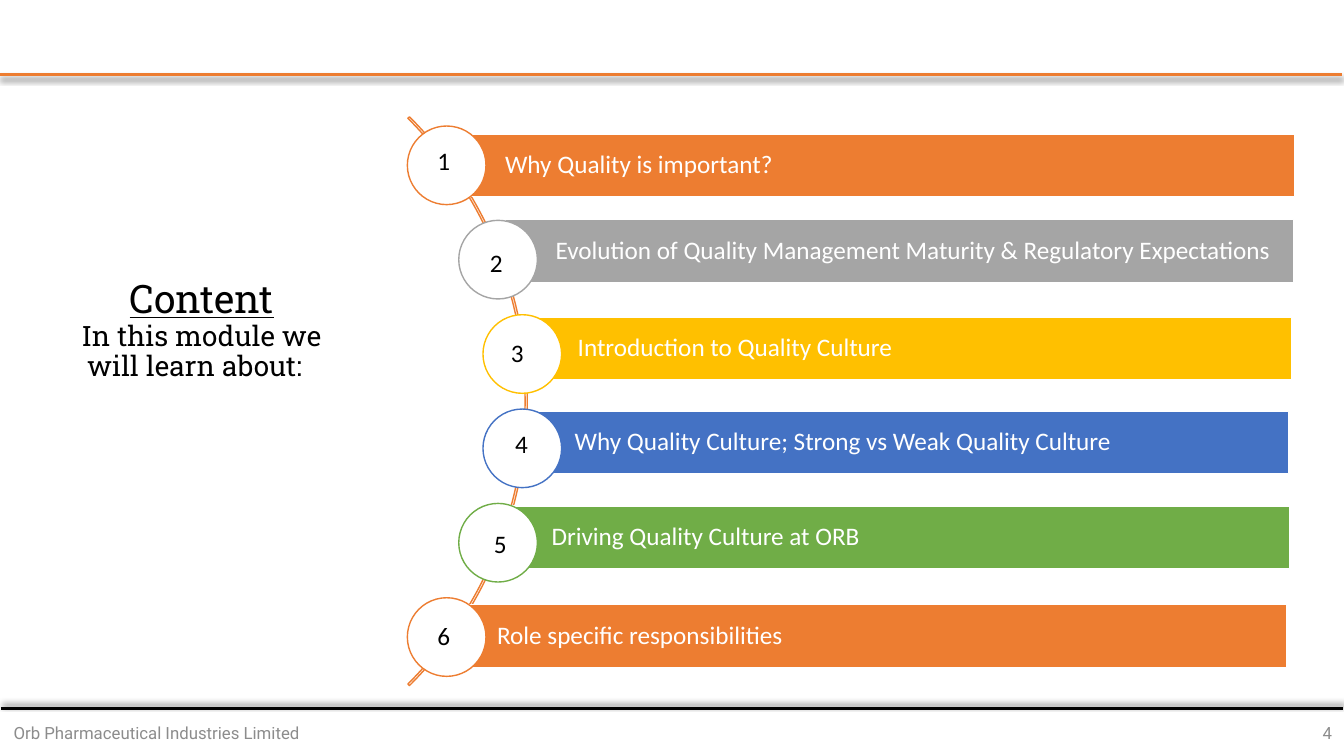
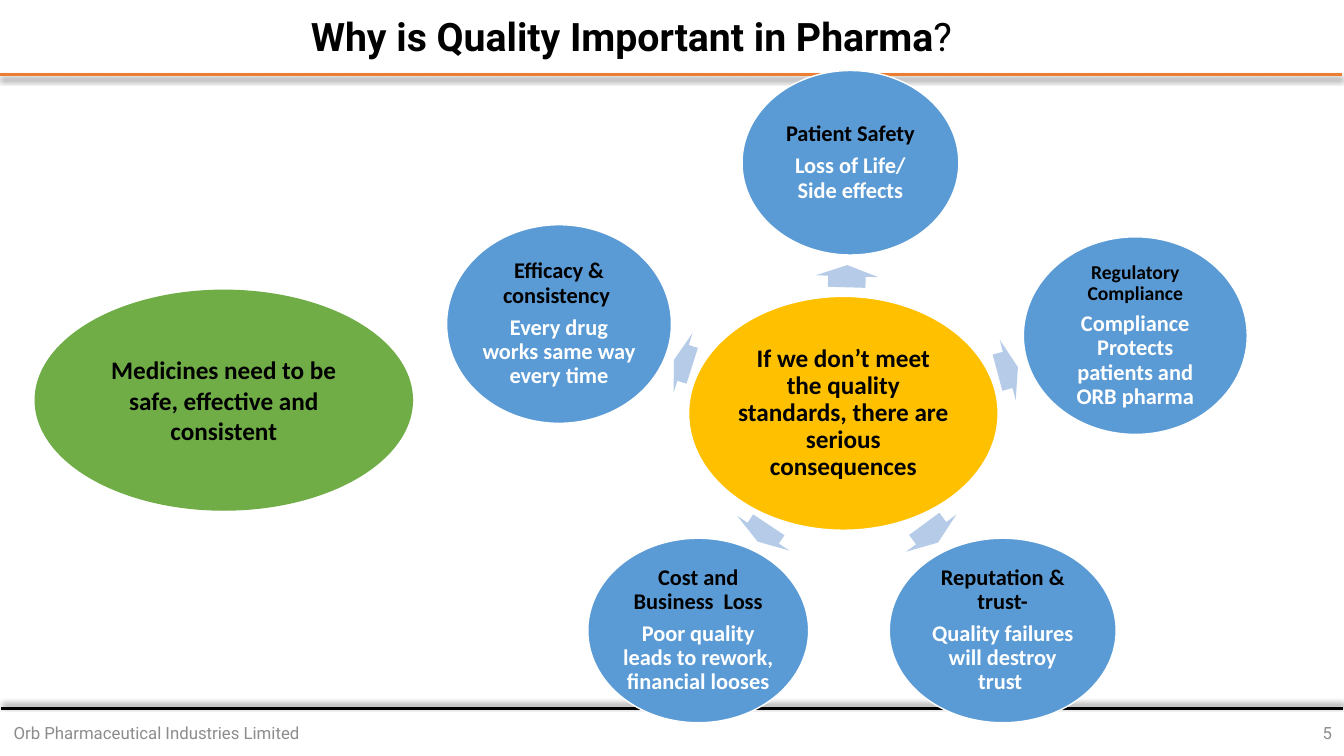
from dataclasses import dataclass

from lxml import etree
from pptx import Presentation
from pptx import util as u
from pptx.dml.color import RGBColor
from pptx.enum import shapes, text
from pptx.oxml import ns

MIDDLE = text.MSO_ANCHOR.MIDDLE
LEFT, CENTER, RIGHT = text.PP_ALIGN.LEFT, text.PP_ALIGN.CENTER, text.PP_ALIGN.RIGHT
SHAPE = shapes.MSO_SHAPE


@dataclass(frozen=True)
class Theme:
    white: str = "FFFFFF"
    black: str = "000000"
    muted: str = "8C8C8C"
    orange: str = "ED7D31"
    gray: str = "A5A5A5"
    gold: str = "FFC000"
    blue: str = "4472C4"
    green: str = "70AD47"
    sky: str = "5B9BD5"
    pale: str = "B5CBE7"
    body_font: str = "Calibri"
    head_font: str = "Roboto"
    slab_font: str = "Roboto Slab"
    title: int = 28
    lead: int = 20
    body: int = 18
    detail: int = 16
    compact: int = 14
    footer: int = 12


T = Theme()


def inches(*lengths):
    return [u.Inches(length) for length in lengths]


def font(size, color, name=T.body_font, **extra):
    return dict(size=u.Pt(size), color=color, name=name, **extra)


class Deck:
    """Holds the style and the slide being built."""

    def __init__(self, first_number):
        self.prs = Presentation()
        self.prs.slide_width, self.prs.slide_height = inches(13.33, 7.5)
        self.layout = self.prs.slide_layouts[5]
        self.number = first_number
        self.slide = None

    def new_slide(self, title_at, title_runs):
        self.slide = self.prs.slides.add_slide(self.layout)
        if len(self.prs.slides) == 1:
            self.shared_rule(0, 0.74, T.orange, 90)
            self.shared_rule(0.01, 7.03, T.black, 270)
        title = self.slide.shapes.title
        title.left, title.top, title.width, title.height = inches(*title_at)
        self.set_text(title.text_frame, [title_runs], CENTER, spacing=0.9)
        small = font(T.footer, T.muted, T.head_font)
        self.label((0.01, 7.07, 3.09, 0.4), "Orb Pharmaceutical Industries Limited", small, CENTER)
        self.label((10.31, 7.07, 3, 0.4), str(self.number), small, RIGHT)
        self.number += 1

    def shared_rule(self, left, top, color, direction):
        """Draws a shadowed rule and moves it to the layout."""
        rule = self.slide.shapes.add_connector(
            shapes.MSO_CONNECTOR.STRAIGHT, *inches(left, top, left + 13.31, top))
        rule.line.color.rgb = RGBColor.from_string(color)
        rule.line.width = u.Pt(2.25)
        effects = etree.SubElement(rule.element.spPr, ns.qn("a:effectLst"))
        shadow = etree.SubElement(
            effects, ns.qn("a:outerShdw"), blurRad=str(u.Pt(4)), dist=str(u.Pt(3)),
            dir=str(direction * 60000), algn="t", rotWithShape="0")
        tint = etree.SubElement(shadow, ns.qn("a:srgbClr"), val=T.black)
        etree.SubElement(tint, ns.qn("a:alpha"), val="40000")
        self.layout.shapes.element.append(rule.element)

    def set_text(self, frame, paragraphs, align, spacing=None, gap=0, **frame_format):
        """Each paragraph is a list of (text, font format); "\\n" breaks a line."""
        defaults = dict(word_wrap=True, auto_size=text.MSO_AUTO_SIZE.NONE,
                        vertical_anchor=MIDDLE)
        for key, value in {**defaults, **frame_format}.items():
            setattr(frame, key, value)
        for index, runs in enumerate(paragraphs):
            paragraph = frame.add_paragraph() if index else frame.paragraphs[0]
            paragraph.alignment = align
            paragraph.line_spacing = spacing
            if index:
                paragraph.space_before = u.Pt(gap)
            for words, style in runs:
                if words == "\n":
                    paragraph.add_line_break()
                    continue
                run = paragraph.add_run()
                run.text = words
                for key, value in style.items():
                    if key == "color":
                        run.font.color.rgb = RGBColor.from_string(value)
                    else:
                        setattr(run.font, key, value)

    def label(self, at, words, style, align, **frame_format):
        box = self.slide.shapes.add_textbox(*inches(*at))
        self.set_text(box.text_frame, [[(words, style)]], align, **frame_format)

    def shape(self, kind, at, fill=None, line=None, adjust=(), rotation=0):
        item = self.slide.shapes.add_shape(kind, *inches(*at))
        item.shadow.inherit = False
        item.rotation = rotation
        for index, value in enumerate(adjust):
            item.adjustments[index] = value
        if fill:
            item.fill.solid()
            item.fill.fore_color.rgb = RGBColor.from_string(fill)
        else:
            item.fill.background()
        if line:
            item.line.color.rgb = RGBColor.from_string(line)
            item.line.width = u.Pt(1)
        else:
            item.line.fill.background()
        return item

    def bar(self, at, fill, words):
        bar = self.shape(SHAPE.RECTANGLE, at, fill, T.white)
        self.set_text(bar.text_frame, [[(words, font(T.body, T.white))]], LEFT,
                      spacing=0.9, margin_left=u.Inches(0.5), margin_right=u.Inches(0.05))

    def bubble(self, at, fill, paragraphs, line=T.white, spacing=0.9, margin=0.02):
        bubble = self.shape(SHAPE.OVAL, at, fill, line)
        sides = ("left", "top", "right", "bottom")
        margins = {f"margin_{side}": u.Inches(margin) for side in sides}
        self.set_text(bubble.text_frame, [[run] for run in paragraphs], CENTER,
                      spacing=spacing, gap=5.6, **margins)


def build_contents(deck):
    heading = font(T.title, T.black, T.slab_font, underline=True)
    lead = font(T.lead, T.black, T.slab_font, underline=False)
    deck.new_slide((0.62, 2.6, 2.76, 1.37), [
        ("Content", heading), ("\n", {}), ("In this module we will learn about:  ", lead)])

    # Arc behind the topics
    deck.shape(SHAPE.BLOCK_ARC, (-2.75, -0.01, 7.98, 7.98), line=T.orange,
               adjust=(189, 27, 0.0027))

    # Topics: words, colour, bar left and top, circle left, digit left and top
    topics = [
        ("Why Quality is important?", T.orange, 4.51, 1.33, 4.04, 4.24, 1.39),
        ("Evolution of Quality Management Maturity & Regulatory Expectations",
         T.gray, 5.01, 2.18, 4.55, 4.76, 2.4),
        ("Introduction to Quality Culture", T.gold, 5.23, 3.15, 4.79, 4.97, 3.3),
        ("Why Quality Culture; Strong vs Weak Quality Culture",
         T.blue, 5.2, 4.08, 4.79, 5.01, 4.2),
        ("Driving Quality Culture at ORB", T.green, 4.97, 5.02, 4.55, 4.8, 5.19),
        ("Role specific responsibilities", T.orange, 4.43, 6, 4.04, 4.24, 6.11),
    ]
    circle, total = 0.78, 12.37
    first, last = 1.25, 5.93
    step = (last - first) / (len(topics) - 1)
    for index, topic in enumerate(topics):
        words, color, bar_left, bar_top, circle_left, digit_left, digit_top = topic
        deck.bar((bar_left, bar_top, total - circle_left, 0.62), color, words)
        deck.shape(SHAPE.OVAL, (circle_left, first + index * step, circle, circle),
                   T.white, color)
        deck.label((digit_left, digit_top, 0.4, 0.4), str(index + 1),
                   font(T.body, T.black), LEFT, vertical_anchor=text.MSO_ANCHOR.TOP)


def build_importance(deck):
    heading = font(T.title, T.black, T.head_font, bold=True)
    deck.new_slide((2.31, 0.07, 8, 0.63), [
        ("Why is Quality Important in Pharma", heading), ("? ", {**heading, "bold": False})])

    # Central statement
    strong = font(T.body, T.black, bold=True)
    deck.bubble((6.83, 2.94, 3.07, 2.32), T.gold, [
        ("If we don’t meet the quality standards, there are serious consequences", strong)],
        margin=0.03)

    # Consequences: heading, its size, detail, bubble place, arrow place and turn
    consequences = [
        ("Patient Safety", T.detail, "Loss of Life/ Side effects",
         (7.36, 0.7, 2.15, 1.83), (8.29, 2.43, 0.22, 0.62), 271.7),
        ("Regulatory Compliance", T.compact, "Compliance Protects patients and ORB pharma",
         (10.15, 2.35, 2.22, 1.96), (9.89, 3.36, 0.21, 0.62), 345.2),
        ("Reputation & trust-", T.detail, "Quality failures will destroy trust ",
         (8.82, 5.34, 2.25, 1.83), (9.12, 4.98, 0.23, 0.62), 53.7),
        ("Cost and Business  Loss", T.detail, "Poor quality leads to rework, financial looses",
         (5.83, 5.34, 2.19, 1.83), (7.47, 4.98, 0.2, 0.62), 123.7),
        ("Efficacy & consistency ", T.detail, "Every drug works same way every time",
         (4.43, 2.23, 2.23, 1.97), (6.68, 3.29, 0.19, 0.62), 197.6),
    ]
    for name, size, detail, bubble_at, arrow_at, turn in consequences:
        deck.shape(SHAPE.RIGHT_ARROW, arrow_at, T.pale, adjust=(0.6, 0.5), rotation=turn)
        deck.bubble(bubble_at, T.sky, [
            (name, font(size, T.black, bold=True)),
            (detail, font(T.detail, T.white, bold=True))])

    # Need
    deck.bubble((0.35, 2.88, 3.74, 2.18), T.green, [
        ("Medicines need to be safe, effective and consistent", strong)],
        line=T.green, spacing=1, margin=0.1)


def main():
    deck = Deck(first_number=4)
    build_contents(deck)
    build_importance(deck)
    deck.prs.save("out.pptx")


if __name__ == "__main__":
    main()
